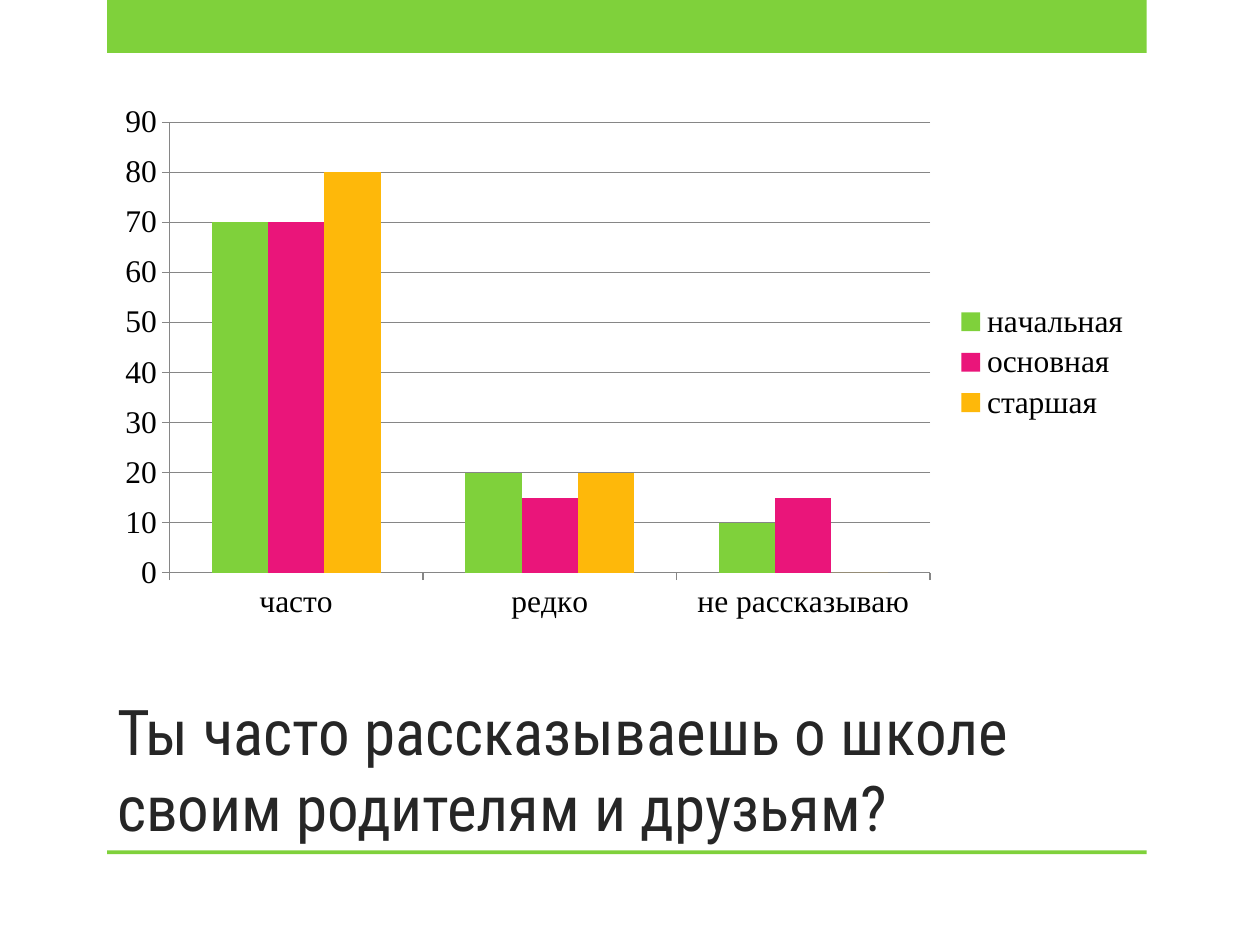
from dataclasses import dataclass

import pptx
import pptx.chart.data
import pptx.dml.color
import pptx.enum.chart
import pptx.enum.shapes
import pptx.enum.text
import pptx.util

Inches = pptx.util.Inches
Pt = pptx.util.Pt
RGBColor = pptx.dml.color.RGBColor

GREEN = RGBColor(0x7F, 0xD1, 0x3B)
PINK = RGBColor(0xEA, 0x15, 0x7A)
AMBER = RGBColor(0xFE, 0xB8, 0x0A)
DARK = RGBColor(0x26, 0x26, 0x26)
BLACK = RGBColor(0, 0, 0)
GREY = RGBColor(0x86, 0x86, 0x86)

TITLE = "Ты часто рассказываешь о школе своим родителям и друзьям?"
ANSWERS = ["часто", "редко", "не рассказываю"]


@dataclass(frozen=True)
class Band:
    top: float
    height: float


@dataclass(frozen=True)
class SchoolStage:
    name: str
    percentages: tuple[int, ...]
    color: RGBColor


BANDS = [Band(0, 0.42), Band(6.75, 0.03)]
STAGES = [
    SchoolStage("начальная", (70, 20, 10), GREEN),
    SchoolStage("основная", (70, 15, 15), PINK),
    SchoolStage("старшая", (80, 20, 0), AMBER),
]


def draw_band(page: pptx.slide.Slide, band: Band) -> None:
    box = page.shapes.add_shape(
        pptx.enum.shapes.MSO_SHAPE.RECTANGLE,
        Inches(0.85), Inches(band.top), Inches(8.25), Inches(band.height),
    )
    box.shadow.inherit = False
    box.fill.solid()
    box.fill.fore_color.rgb = GREEN
    box.line.fill.background()


def write_title(page: pptx.slide.Slide) -> None:
    title = page.shapes.title
    title.left, title.top = Inches(0.83), Inches(5)
    title.width, title.height = Inches(8.42), Inches(1.75)
    frame = title.text_frame
    frame.word_wrap = True
    frame.auto_size = pptx.enum.text.MSO_AUTO_SIZE.NONE
    frame.vertical_anchor = pptx.enum.text.MSO_ANCHOR.BOTTOM
    para = frame.paragraphs[0]
    para.alignment = pptx.enum.text.PP_ALIGN.LEFT
    span = para.add_run()
    span.text = TITLE
    span.font.name = "Roboto Condensed"
    span.font.size = Pt(36)
    span.font.color.rgb = DARK


def draw_chart(page: pptx.slide.Slide) -> None:
    data = pptx.chart.data.CategoryChartData()
    data.categories = ANSWERS
    for stage in STAGES:
        data.add_series(stage.name, stage.percentages)
    chart = page.shapes.add_chart(
        pptx.enum.chart.XL_CHART_TYPE.COLUMN_CLUSTERED,
        Inches(0.83), Inches(0.75), Inches(8.25), Inches(4.25), data,
    ).chart
    chart.has_title = False
    chart.font.name = "Times New Roman"
    chart.font.size = Pt(18)
    chart.font.color.rgb = BLACK
    chart.has_legend = True
    chart.legend.position = pptx.enum.chart.XL_LEGEND_POSITION.RIGHT
    chart.legend.include_in_layout = False

    plot = chart.plots[0]
    plot.gap_width = 150
    plot.overlap = 0
    plot.vary_by_categories = False
    for series, stage in zip(plot.series, STAGES):
        series.format.fill.solid()
        series.format.fill.fore_color.rgb = stage.color

    value_axis = chart.value_axis
    value_axis.minimum_scale, value_axis.maximum_scale = 0, 90
    value_axis.major_unit = 10
    value_axis.has_major_gridlines = True
    for axis in (chart.category_axis, value_axis):
        axis.major_tick_mark = pptx.enum.chart.XL_TICK_MARK.OUTSIDE
    for part in (chart.category_axis, value_axis, value_axis.major_gridlines):
        part.format.line.color.rgb = GREY
        part.format.line.width = Pt(0.75)


def main() -> None:
    deck = pptx.Presentation()
    deck.slide_width, deck.slide_height = Inches(10), Inches(7.5)
    page = deck.slides.add_slide(deck.slide_layouts.get_by_name("Title Only"))
    for band in BANDS:
        draw_band(page, band)
    write_title(page)
    draw_chart(page)
    deck.save("out.pptx")


if __name__ == "__main__":
    main()
